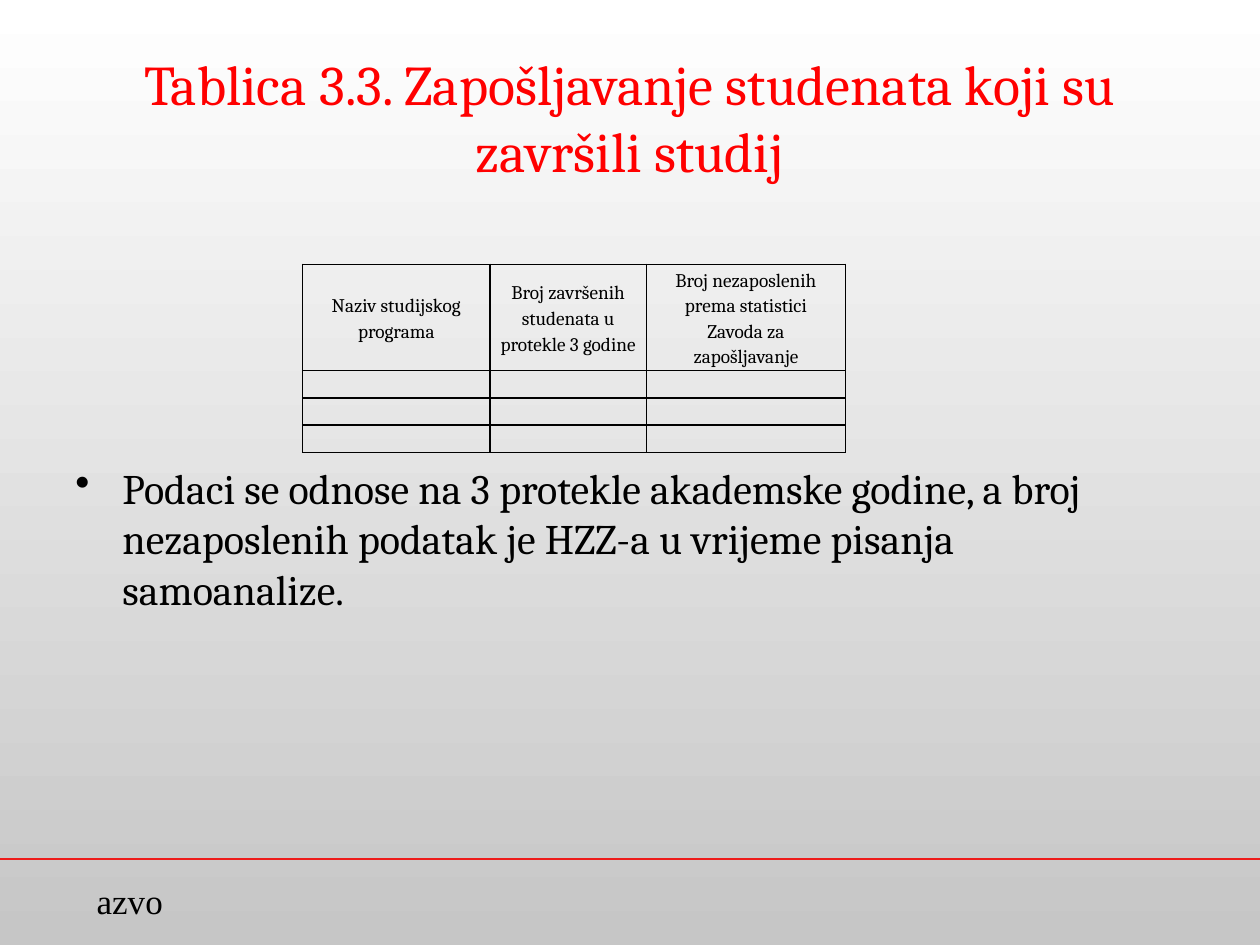
from dataclasses import dataclass

from lxml import etree
from pptx import Presentation
from pptx import util as u
from pptx.dml.color import RGBColor
from pptx.enum import shapes, text
from pptx.oxml import ns


@dataclass(frozen=True)
class Theme:
    """Colours, fonts and type sizes of the slide."""
    title_color: RGBColor = RGBColor(255, 0, 0)
    ink: RGBColor = RGBColor(0, 0, 0)
    rule: RGBColor = RGBColor(0xEE, 0x1C, 0x1B)
    top: RGBColor = RGBColor(255, 255, 255)
    bottom: RGBColor = RGBColor(0xC6, 0xC6, 0xC6)
    font: str = "Cambria"
    footer_font: str = "Times New Roman"
    title_size: int = 32
    body_size: int = 24
    footer_size: int = 20
    table_size: int = 11


THEME = Theme()
HEADERS = (
    "Naziv studijskog programa",
    "Broj završenih studenata u protekle 3 godine",
    "Broj nezaposlenih prema statistici Zavoda za zapošljavanje",
)


def set_font(paragraph, size, color=THEME.ink, name=THEME.font):
    """Apply one typeface, size and colour to a paragraph."""
    paragraph.font.name = name
    paragraph.font.size = u.Pt(size)
    paragraph.font.color.rgb = color


def add_text(slide, box, words):
    """Place a wrapping text box and return its frame and paragraph."""
    frame = slide.shapes.add_textbox(*map(u.Cm, box)).text_frame
    frame.word_wrap = True
    paragraph = frame.paragraphs[0]
    paragraph.text = words
    return frame, paragraph


def add_background(slide):
    """Fill the slide with a vertical gradient."""
    fill = slide.background.fill
    fill.gradient()
    fill.gradient_angle = 270
    for stop, color, position in zip(fill.gradient_stops, (THEME.top, THEME.bottom), (0, 1)):
        stop.color.rgb = color
        stop.position = position


def add_title(slide, box):
    """Place the centred title."""
    frame, paragraph = add_text(slide, box, "Tablica 3.3. Zapošljavanje studenata koji su završili studij")
    frame.vertical_anchor = text.MSO_ANCHOR.MIDDLE
    paragraph.alignment = text.PP_ALIGN.CENTER
    set_font(paragraph, THEME.title_size, THEME.title_color)


def add_borders(cell):
    """Draw a thin line on each side of a cell."""
    properties = cell._tc.get_or_add_tcPr()
    for index, side in enumerate(("lnL", "lnR", "lnT", "lnB")):
        line = etree.Element(ns.qn(f"a:{side}"), w=str(u.Pt(1)))
        fill = etree.SubElement(line, ns.qn("a:solidFill"))
        etree.SubElement(fill, ns.qn("a:srgbClr"), val=str(THEME.ink))
        properties.insert(index, line)


def add_employment_table(slide, box, widths=(3.78, 3.15, 4.02), heights=(2.07, 0.55, 0.55, 0.55)):
    """Place the table with a header row and empty rows to fill in."""
    table = slide.shapes.add_table(len(heights), len(widths), *map(u.Cm, box)).table
    table.first_row = table.horz_banding = False
    for column, width in zip(table.columns, widths):
        column.width = u.Cm(width)
    for row, height in zip(table.rows, heights):
        row.height = u.Cm(height)
    for column, header in enumerate(HEADERS):
        table.cell(0, column).text = header
    for cell in table.iter_cells():
        cell.fill.background()
        cell.vertical_anchor = text.MSO_ANCHOR.MIDDLE
        cell.margin_left = cell.margin_right = u.Cm(0.18)
        cell.margin_top = cell.margin_bottom = 0
        add_borders(cell)
        paragraph = cell.text_frame.paragraphs[0]
        paragraph.alignment = text.PP_ALIGN.CENTER
        paragraph.line_spacing = 1.15
        set_font(paragraph, THEME.table_size)


def add_note(slide, box):
    """Place the bulleted note under the table."""
    _, paragraph = add_text(slide, box, "Podaci se odnose na 3 protekle akademske godine, a broj nezaposlenih "
                                        "podatak je HZZ-a u vrijeme pisanja samoanalize.")
    properties = paragraph._p.get_or_add_pPr()
    properties.set("marL", str(u.Cm(0.95)))
    properties.set("indent", str(u.Cm(-0.95)))
    etree.SubElement(properties, ns.qn("a:buChar"), char="•")
    set_font(paragraph, THEME.body_size)


def add_footer(slide, box):
    """Place the red rule across the slide and the label below it."""
    left, top, width, height = box
    rule = slide.shapes.add_connector(shapes.MSO_CONNECTOR.STRAIGHT, *map(u.Cm, (left, top, left + width, top)))
    rule.line.color.rgb = THEME.rule
    rule.line.width = u.Pt(1)
    etree.SubElement(rule._element.spPr, ns.qn("a:effectLst"))
    _, paragraph = add_text(slide, (left + 1.7, top + 0.28, 2.21, height - 0.6), "azvo")
    set_font(paragraph, THEME.footer_size, name=THEME.footer_font)


def main():
    """Build and save the slide."""
    presentation = Presentation()
    presentation.slide_width, presentation.slide_height = u.Cm(25.4), u.Cm(19.05)
    slide = presentation.slides.add_slide(presentation.slide_layouts[6])
    add_background(slide)
    add_footer(slide, (0, 17.32, 25.4, 1.73))
    add_title(slide, (1.27, 0.76, 22.86, 3.18))
    add_note(slide, (1.27, 9.2, 22.86, 7.82))
    add_employment_table(slide, (6.1, 5.33, 10.95, 3.72))
    presentation.save("out.pptx")


if __name__ == "__main__":
    main()
